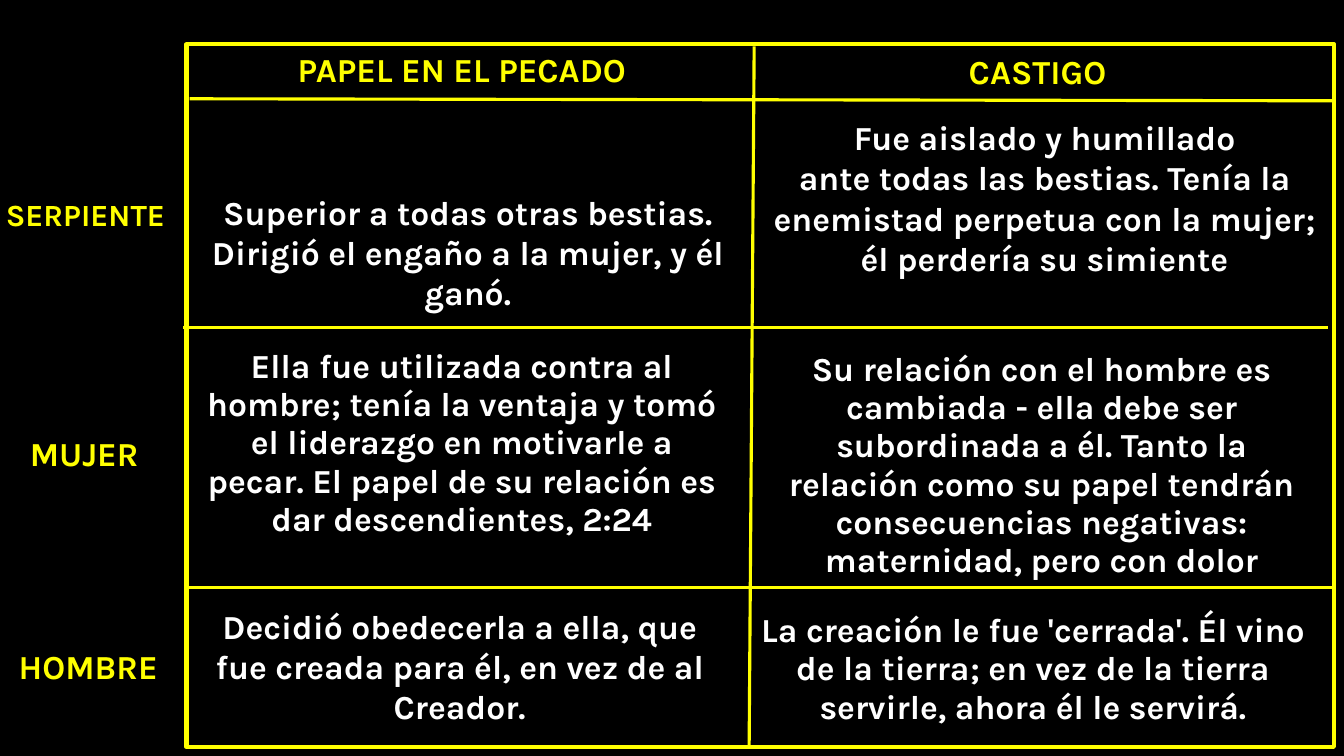
"""Build a slide comparing the role in the sin and the punishment of each figure."""
from dataclasses import dataclass

from lxml.etree import SubElement
from pptx import Presentation
from pptx.dml.color import RGBColor
from pptx.enum.shapes import MSO_CONNECTOR, MSO_SHAPE
from pptx.enum.text import MSO_AUTO_SIZE, PP_ALIGN
from pptx.oxml.ns import qn
from pptx.util import Inches, Pt


@dataclass(frozen=True)
class Theme:
    background: RGBColor = RGBColor(0, 0, 0)
    accent: RGBColor = RGBColor(255, 255, 0)
    body: RGBColor = RGBColor(255, 255, 255)
    font: str = "Karla"
    small: Pt = Pt(22)
    normal: Pt = Pt(24)
    frame: Pt = Pt(3)
    rule: Pt = Pt(2.25)


theme = Theme()


def add_text(page, bounds, paragraphs, color, size=theme.normal, align=PP_ALIGN.CENTER, spacing=None):
    box = page.shapes.add_textbox(*map(Inches, bounds))
    frame = box.text_frame
    frame.word_wrap = True
    frame.auto_size = MSO_AUTO_SIZE.SHAPE_TO_FIT_TEXT
    for index, text in enumerate(paragraphs):
        para = frame.add_paragraph() if index else frame.paragraphs[0]
        para.alignment = align
        para.line_spacing = spacing
        span = para.add_run()
        span.text = text
        span.font.color.rgb = color
        for name, value in {"name": theme.font, "size": size, "bold": True}.items():
            setattr(span.font, name, value)


deck = Presentation()
deck.slide_width, deck.slide_height = Inches(13.33), Inches(7.5)
page = deck.slides.add_slide(deck.slide_layouts[6])
page.background.fill.solid()
page.background.fill.fore_color.rgb = theme.background

labels = [
    ("SERPIENTE", (-0.04, 1.89, 2, 0.47), theme.small, PP_ALIGN.LEFT),
    ("MUJER", (-0.04, 4.25, 1.75, 0.5), theme.normal, PP_ALIGN.CENTER),
    ("HOMBRE", (0, 6.36, 1.75, 0.5), theme.normal, PP_ALIGN.CENTER),
    ("PAPEL EN EL PECADO", (1.88, 0.44, 5.4, 0.5), theme.normal, PP_ALIGN.CENTER),
    ("CASTIGO", (7.5, 0.46, 5.58, 0.5), theme.normal, PP_ALIGN.CENTER),
]
for label, bounds, size, align in labels:
    add_text(page, bounds, [label], theme.accent, size, align)

cells = [
    ((1.94, 1.85, 5.4, 1.31), None,
     ["Superior a todas otras bestias. Dirigió el engaño a la mujer, y él ganó."]),
    ((7.57, 1.11, 5.58, 1.72), None,
     ["Fue aislado y humillado",
      "ante todas las bestias. Tenía la enemistad perpetua con la mujer; él perdería su simiente"]),
    ((1.88, 3.4, 5.4, 2.4), 0.95,
     ["Ella fue utilizada contra al hombre; tenía la ventaja y tomó el liderazgo en motivarle a "
      "pecar. El papel de su relación es dar descendientes, 2:24"]),
    ((7.54, 3.43, 5.58, 2.4), 0.95,
     ["Su relación con el hombre es cambiada - ella debe ser subordinada a él. Tanto la relación "
      "como su papel tendrán consecuencias negativas: maternidad, pero con dolor"]),
    ((1.86, 5.96, 5.4, 1.31), None,
     ["Decidió obedecerla a ella, que fue creada para él, en vez de al Creador."]),
    ((7.33, 6.02, 5.83, 1.25), 0.95,
     ["La creación le fue 'cerrada'. Él vino de la tierra; en vez de la tierra servirle, "
      "ahora él le servirá."]),
]
for bounds, spacing, paragraphs in cells:
    add_text(page, bounds, paragraphs, theme.body, spacing=spacing)

border = page.shapes.add_shape(MSO_SHAPE.RECTANGLE, *map(Inches, (1.85, 0.44, 11.38, 6.97)))
border.shadow.inherit = False
border.fill.background()
border.line.color.rgb = theme.accent
border.line.width = theme.frame

dividers = [
    (1.88, 0.98, 13.23, 1),
    (7.48, 0.46, 7.43, 7.42),
    (1.82, 3.25, 13.17, 3.25),
    (1.86, 5.83, 13.23, 5.83),
]
for ends in dividers:
    divider = page.shapes.add_connector(MSO_CONNECTOR.STRAIGHT, *map(Inches, ends))
    divider.line.color.rgb = theme.accent
    divider.line.width = theme.rule
    SubElement(divider._element.spPr, qn("a:effectLst"))

deck.save("out.pptx")
